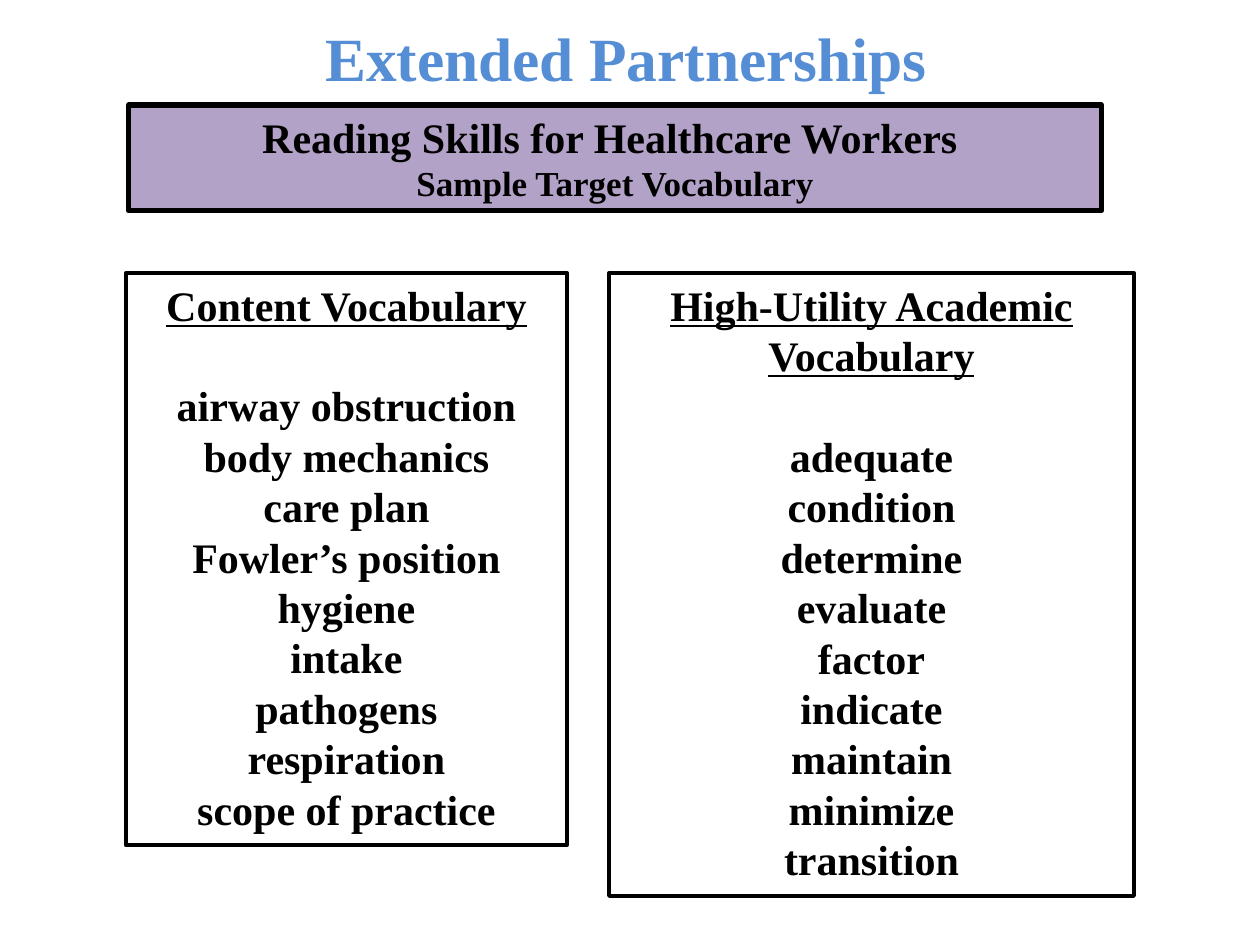
from lxml import etree
from pptx import Presentation
from pptx import util as u
from pptx.dml.color import RGBColor
from pptx.enum import shapes, text
from pptx.oxml.ns import qn

COLORS = {"ink": "000000", "paper": "FFFFFF", "banner": "B3A2C7",
          "title": "558ED5", "outline": "002060"}
FONT = "Times New Roman"
LINE_PITCH = 28.8


def color(name):
    return RGBColor.from_string(COLORS[name])


def write(paragraph, content, size=24, ink="ink", underline=False, before=0):
    """Fill a paragraph with one bold, centred run."""
    paragraph.alignment = text.PP_ALIGN.CENTER
    paragraph.space_before = u.Pt(before)
    run = paragraph.add_run()
    run.text = content
    font = run.font
    font.name, font.size, font.bold = FONT, u.Pt(size), True
    font.underline = underline
    font.color.rgb = color(ink)
    return run


class SlideBuilder:
    def __init__(self, slide):
        self.slide = slide

    def box(self, left, top, width, height, lines, fill="paper", border=2.25):
        """Draw a bordered box; lines holds (content, format) pairs."""
        shape = self.slide.shapes.add_shape(
            shapes.MSO_SHAPE.RECTANGLE, *map(u.Pt, (left, top, width, height)))
        shape.shadow.inherit = False
        shape.fill.solid()
        shape.fill.fore_color.rgb = color(fill)
        shape.line.color.rgb = color("ink")
        shape.line.width = u.Pt(border)
        frame = shape.text_frame
        frame.word_wrap = True
        frame.vertical_anchor = text.MSO_ANCHOR.TOP
        frame.auto_size = text.MSO_AUTO_SIZE.SHAPE_TO_FIT_TEXT
        for index, (content, style) in enumerate(lines):
            paragraph = frame.add_paragraph() if index else frame.paragraphs[0]
            write(paragraph, content, **style)

    def word_list(self, left, width, height, heading, words):
        """Box with an underlined heading, one line of space, then words."""
        lines = [(heading, {"underline": True})]
        lines += [(word, {"before": 0 if index else LINE_PITCH})
                  for index, word in enumerate(words)]
        self.box(left, 156, width, height, lines)

    def title(self, left, top, width, height, content):
        shape = self.slide.shapes.add_textbox(
            *map(u.Pt, (left, top, width, height)))
        frame = shape.text_frame
        frame.word_wrap = True
        frame.vertical_anchor = text.MSO_ANCHOR.MIDDLE
        run = write(frame.paragraphs[0], content, size=35.1, ink="title")
        # Letter outline
        outline = etree.Element(qn("a:ln"), w=str(u.Pt(1.5)))
        solid = etree.SubElement(outline, qn("a:solidFill"))
        etree.SubElement(solid, qn("a:srgbClr"), val=COLORS["outline"])
        run.font._element.insert(0, outline)


def main():
    presentation = Presentation()
    presentation.slide_width, presentation.slide_height = u.Pt(720), u.Pt(540)
    builder = SlideBuilder(
        presentation.slides.add_slide(presentation.slide_layouts[6]))

    # Vocabulary columns
    builder.word_list(72, 252, 327, "Content Vocabulary", [
        "airway obstruction", "body mechanics", "care plan",
        "Fowler’s position", "hygiene", "intake", "pathogens",
        "respiration", "scope of practice"])
    builder.word_list(348, 300, 356, "High-Utility Academic Vocabulary", [
        "adequate", "condition", "determine", "evaluate", "factor",
        "indicate", "maintain", "minimize", "transition"])

    # Course banner
    builder.box(73.5, 60, 556, 60.5, [
        ("Reading Skills for Healthcare Workers ", {}),
        ("Sample Target Vocabulary", {"size": 20})],
        fill="banner", border=3)

    # Slide title
    builder.title(13.5, 5, 688.5, 55, "Extended Partnerships")

    presentation.save("out.pptx")


if __name__ == "__main__":
    main()
